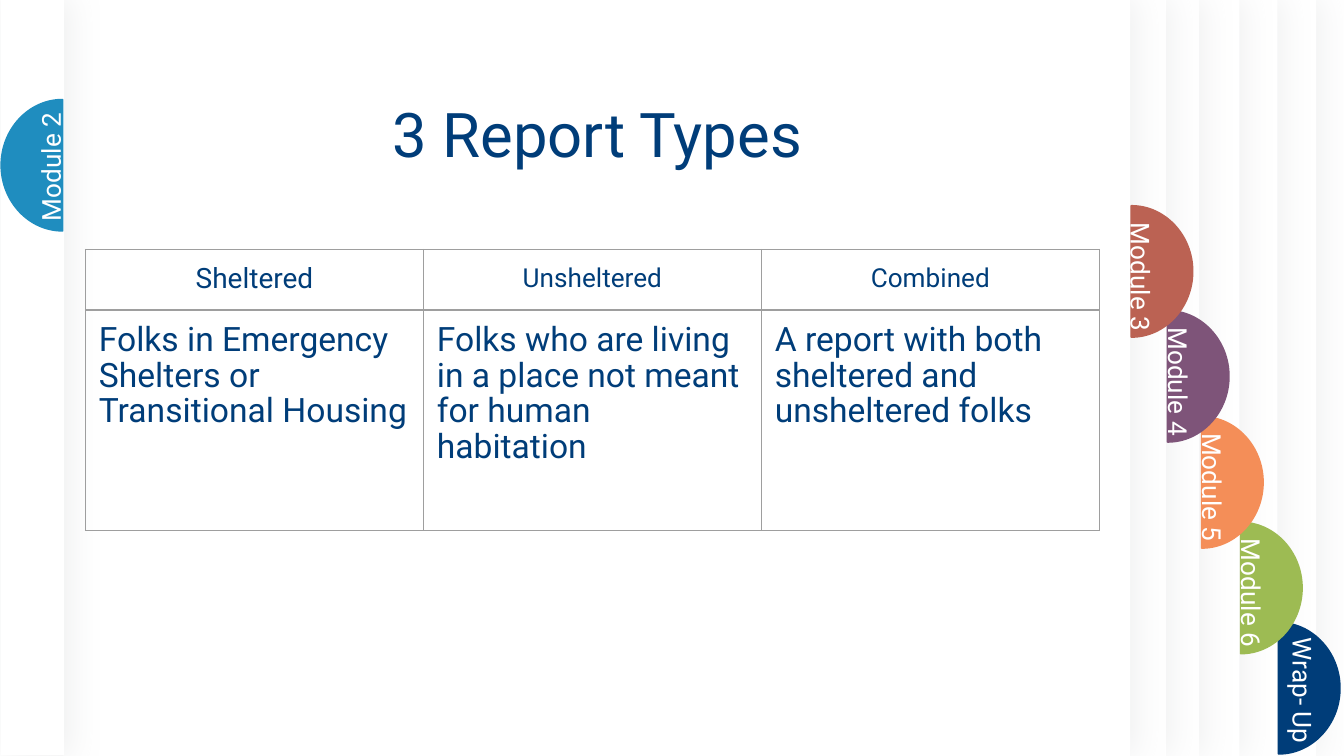
from lxml import etree
from pptx import Presentation
from pptx import util as u
from pptx.dml.color import RGBColor
from pptx.enum import shapes, text
from pptx.oxml import ns, parse_xml

FONT = "Roboto"
NAVY, WHITE, GREY, SHADOW = "003D79", "FFFFFF", "9E9E9E", "D3D5D6"
TAB_WIDTH, TAB_HEIGHT = 32.8, 70.2
ARC_HANDLE = 0.55
PAGE_RIGHTS = [705.1, 684.3, 664, 642.4, 624.6]
PAGE_WIDTH, PAGE_HEIGHT = 566, 405
LEFT_TAB = ("Module 2", "1F8DBF", 33.5, 53.4, -6.5, -8)
RIGHT_TABS = [
    ("Wrap- Up", NAVY, 685, 333.6, 13, 11),
    ("Module 6", "9DBB53", 664.7, 279.9, 5.8, 11.6),
    ("Module 5", "F48E58", 643.8, 223.3, 5.8, 11.6),
    ("Module 4", "7E5479", 625.5, 166.5, 5.8, 11.8),
    ("Module 3", "BB6253", 606.1, 110.3, 5.2, 11.9),
]
REPORTS = [
    ("Sheltered", 15, "Folks in Emergency Shelters or Transitional Housing"),
    ("Unsheltered", 14, "Folks who are living in a place not meant for human habitation"),
    ("Combined", 14, "A report with both sheltered and unsheltered folks"),
]


def color(value):
    """Return the colour for a hex string."""
    return RGBColor.from_string(value)


def write(frame, content, size, fill=NAVY, align="LEFT", spacing=None):
    """Put one formatted paragraph into a text frame."""
    frame.word_wrap = True
    paragraph = frame.paragraphs[0]
    paragraph.alignment = getattr(text.PP_ALIGN, align)
    if spacing:
        paragraph.line_spacing = spacing
    run = paragraph.add_run()
    run.text = content
    run.font.name = FONT
    run.font.size = u.Pt(size)
    run.font.color.rgb = color(fill)


def add_text(slide, box, content, rotation=0, **style):
    """Add a text box with small margins."""
    shape = slide.shapes.add_textbox(*map(u.Pt, box))
    shape.rotation = rotation
    frame = shape.text_frame
    frame.margin_left = frame.margin_right = u.Pt(5.2)
    frame.margin_top = frame.margin_bottom = u.Pt(2.6)
    frame.vertical_anchor = text.MSO_ANCHOR.MIDDLE
    write(frame, content, **style)


def add_page(slide, box):
    """Add a white sheet with a soft shadow to its right."""
    shape = slide.shapes.add_shape(shapes.MSO_SHAPE.RECTANGLE, *map(u.Pt, box))
    shape.fill.solid()
    shape.fill.fore_color.rgb = color(WHITE)
    shape.line.fill.background()
    shape.shadow.inherit = False
    effects = shape.element.spPr.find(ns.qn("a:effectLst"))
    shadow = etree.SubElement(
        effects, ns.qn("a:outerShdw"), blurRad=str(u.Pt(17)), dist=str(u.Pt(3)),
        dir="0", algn="l", rotWithShape="0")
    tint = etree.SubElement(shadow, ns.qn("a:srgbClr"), val=SHADOW)
    etree.SubElement(tint, ns.qn("a:alpha"), val="35000")


def add_curve(outline, points):
    """Append one cubic curve to a freeform outline."""
    curve = etree.SubElement(outline, ns.qn("a:cubicBezTo"))
    for x, y in points:
        etree.SubElement(curve, ns.qn("a:pt"), x=str(u.Pt(x)), y=str(u.Pt(y)))


def add_tab(slide, edge, top, fill, side):
    """Add a half disc on the left (-1) or right (1) of a vertical edge."""
    radius = TAB_HEIGHT / 2
    builder = slide.shapes.build_freeform(u.Pt(edge), u.Pt(top))
    builder.add_line_segments(
        [(u.Pt(edge), u.Pt(top + TAB_HEIGHT)),
         (u.Pt(edge + side * TAB_WIDTH), u.Pt(top + radius))], close=True)
    shape = builder.convert_to_shape()
    outline = next(shape.element.spPr.iter(ns.qn("a:path")))
    close = outline[-1]
    outline.remove(outline[-2])
    base, far = (0, TAB_WIDTH) if side > 0 else (TAB_WIDTH, 0)
    bend = base + (far - base) * ARC_HANDLE
    rise = radius * ARC_HANDLE
    add_curve(outline, [(bend, TAB_HEIGHT), (far, radius + rise), (far, radius)])
    add_curve(outline, [(far, radius - rise), (bend, 0), (base, 0)])
    outline.append(close)
    shape.fill.solid()
    shape.fill.fore_color.rgb = color(fill)
    shape.line.color.rgb = color(fill)
    shape.line.width = u.Pt(1)
    shape.shadow.inherit = False


def add_tab_label(slide, edge, top, label, shift, drop, rotation):
    """Write a turned label offset from the middle of a tab's edge."""
    width, height = 86.4, 22.3
    box = (edge + shift - width / 2, top + TAB_HEIGHT / 2 + drop - height / 2, width, height)
    add_text(slide, box, label, rotation=rotation, size=14, fill=WHITE)


def add_notebook(slide):
    """Stack the pages and attach the module tabs."""
    for right in PAGE_RIGHTS:
        add_page(slide, (right - PAGE_WIDTH, 0, PAGE_WIDTH, PAGE_HEIGHT))
    add_page(slide, (33.8, 0, 571.7, PAGE_HEIGHT))
    add_page(slide, (0.5, -0.5, 33.8, PAGE_HEIGHT))
    tabs = [(*tab, 1, 90) for tab in RIGHT_TABS] + [(*LEFT_TAB, -1, 270)]
    for label, fill, edge, top, shift, drop, side, rotation in tabs:
        add_tab(slide, edge, top, fill, side)
    for label, fill, edge, top, shift, drop, side, rotation in tabs:
        add_tab_label(slide, edge, top, label, shift, drop, rotation)


def format_cell(cell, content, **style):
    """Fill a cell with text, even margins and thin grey borders."""
    cell.margin_left = cell.margin_right = u.Pt(7.2)
    cell.margin_top = cell.margin_bottom = u.Pt(7.2)
    cell.fill.background()
    write(cell.text_frame, content, **style)
    properties = cell._tc.get_or_add_tcPr()
    for index, side in enumerate("LRTB"):
        properties.insert(index, parse_xml(
            f'<a:ln{side} {ns.nsdecls("a")} w="{u.Pt(0.75)}"><a:solidFill>'
            f'<a:srgbClr val="{GREY}"/></a:solidFill></a:ln{side}>'))


def add_report_table(slide, box):
    """Add the table of report types, one column each."""
    left, top, width, height = box
    header = 31.7
    table = slide.shapes.add_table(2, len(REPORTS), *map(u.Pt, box)).table
    table.first_row = table.horz_banding = False
    table.rows[0].height = u.Pt(header)
    table.rows[1].height = u.Pt(height - header)
    for index, (name, size, description) in enumerate(REPORTS):
        table.columns[index].width = u.Pt(width / len(REPORTS))
        format_cell(table.cell(0, index), name, size=size, align="CENTER")
        format_cell(table.cell(1, index), description, size=18, spacing=0.9)


def main():
    """Build and save the slide."""
    presentation = Presentation()
    presentation.slide_width, presentation.slide_height = u.Pt(720), u.Pt(405)
    slide = presentation.slides.add_slide(presentation.slide_layouts[6])
    add_notebook(slide)
    add_text(slide, (29.8, 51, 580.5, 45.4), "3 Report Types",
             size=33, align="CENTER", spacing=0.9)
    add_report_table(slide, (45.8, 133.6, 543.2, 150))
    presentation.save("out.pptx")


if __name__ == "__main__":
    main()
